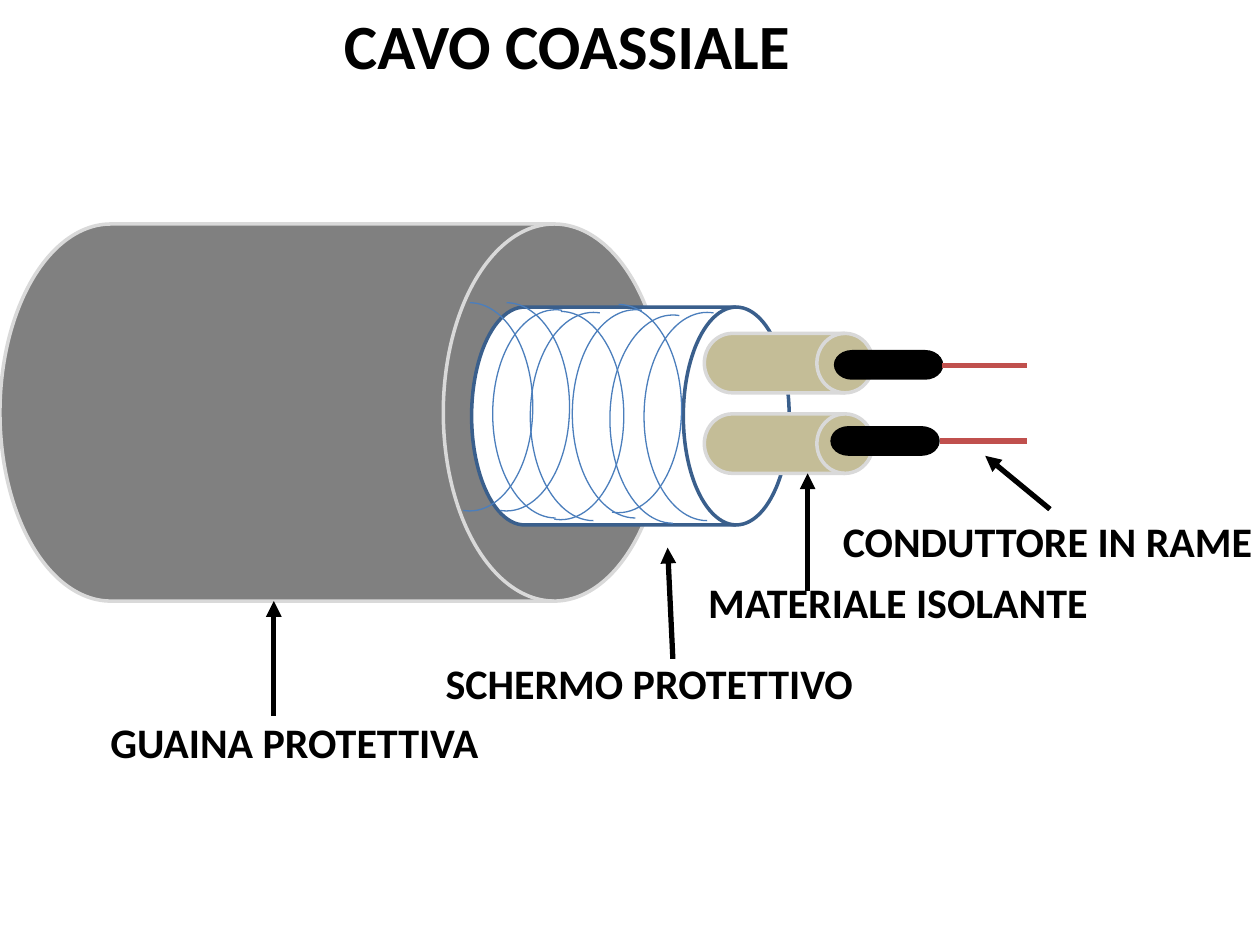
from dataclasses import dataclass
from typing import Optional

import pptx
import pptx.dml.color
import pptx.enum.shapes
import pptx.enum.text
import pptx.oxml
import pptx.util
from pptx.oxml.ns import qn

Pt = pptx.util.Pt
SHAPE = pptx.enum.shapes.MSO_SHAPE
BLACK, COPPER, RIM, SHIELD, BRAID = "000000", "C0504D", "D9D9D9", "3A5F8C", "4B7EBC"


@dataclass
class Drum:
    x: float
    y: float
    w: float
    h: float
    fill: str
    rim: Optional[str] = None


@dataclass
class Line:
    x1: float
    y1: float
    x2: float
    y2: float
    color: str = BLACK
    arrow: bool = True


@dataclass
class Label:
    text: str
    x: float
    y: float
    w: float
    h: float = 36
    size: float = 24
    wrap: bool = False


@dataclass
class Arc:
    x: float
    y: float
    rotation: float = 0


DRUMS = [
    Drum(0, 128, 380, 215.5, "808080", RIM),
    Drum(269.5, 175.5, 181.5, 124.5, "FFFFFF", SHIELD),
    Drum(402.5, 190.5, 96.5, 34, "C4BD97", RIM),
    Drum(402.5, 236.5, 96.5, 34, "C4BD97", RIM),
    Drum(476.5, 200, 62.5, 17, BLACK),
    Drum(474.5, 243.5, 62.5, 17, BLACK),
]
WIRES = [
    Line(538.5, 209, 587, 209, COPPER, arrow=False),
    Line(537, 252, 587, 252, COPPER, arrow=False),
]
ARCS = [
    Arc(368, 178.5, 180),
    Arc(253.5, 173),
    Arc(348.5, 180, 180),
    Arc(327, 177, 180),
    Arc(303, 178.5, 180),
    Arc(281.5, 177, 180),
    Arc(284.5, 178),
    Arc(317.5, 174),
    Arc(232.5, 173),
]
LABELS = [
    Label("CAVO COASSIALE", 189.5, 0, 272, 51, size=36),
    Label("GUAINA PROTETTIVA", 56, 406, 225.5, wrap=True),
    Label("SCHERMO PROTETTIVO", 247.5, 372, 250),
    Label("MATERIALE ISOLANTE", 397.5, 326, 233.5),
    Label("CONDUTTORE IN RAME", 474.5, 291, 250.5),
]
POINTERS = [
    Line(156.5, 409, 156.5, 343.5),
    Line(384.5, 376.5, 381.5, 313),
    Line(461.5, 337.5, 461.5, 270.5),
    Line(600, 291, 563, 260.5),
]


def rgb(value: str) -> pptx.dml.color.RGBColor:
    return pptx.dml.color.RGBColor.from_string(value)


def draw_drum(s, d: Drum) -> None:
    sp = s.shapes.add_shape(SHAPE.FLOWCHART_DIRECT_ACCESS_STORAGE,
                            Pt(d.x), Pt(d.y), Pt(d.w), Pt(d.h))
    sp.shadow.inherit = False
    sp.fill.solid()
    sp.fill.fore_color.rgb = rgb(d.fill)
    if d.rim:
        sp.line.color.rgb = rgb(d.rim)
        sp.line.width = Pt(2)
    else:
        sp.line.fill.background()


def draw_line(s, line: Line) -> None:
    cx = s.shapes.add_connector(pptx.enum.shapes.MSO_CONNECTOR.STRAIGHT,
                                Pt(line.x1), Pt(line.y1), Pt(line.x2), Pt(line.y2))
    cx.line.color.rgb = rgb(line.color)
    cx.line.width = Pt(3)
    if line.arrow:
        tail = pptx.oxml.xmlchemy.OxmlElement("a:tailEnd")
        tail.set("type", "triangle")
        cx.line._get_or_add_ln().append(tail)
    sp_pr = cx._element.find(qn("p:spPr"))
    sp_pr.append(pptx.oxml.xmlchemy.OxmlElement("a:effectLst"))


def draw_arc(s, arc: Arc) -> None:
    """Draw one half turn of the braided shield."""
    sp = s.shapes.add_shape(SHAPE.ARC, Pt(arc.x), Pt(arc.y), Pt(72), Pt(119))
    sp.adjustments[0] = 162
    sp.adjustments[1] = 56.155
    sp.rotation = arc.rotation
    sp.shadow.inherit = False
    sp.fill.background()
    sp.line.color.rgb = rgb(BRAID)
    sp.line.width = Pt(0.75)


def draw_label(s, label: Label) -> None:
    tb = s.shapes.add_textbox(Pt(label.x), Pt(label.y), Pt(label.w), Pt(label.h))
    tf = tb.text_frame
    tf.word_wrap = label.wrap
    tf.auto_size = pptx.enum.text.MSO_AUTO_SIZE.SHAPE_TO_FIT_TEXT
    r = tf.paragraphs[0].add_run()
    r.text = label.text
    r.font.name = "Calibri"
    r.font.size = Pt(label.size)
    r.font.bold = True
    r.font.color.rgb = rgb(BLACK)


def main() -> None:
    prs = pptx.Presentation()
    prs.slide_width, prs.slide_height = Pt(720), Pt(540)
    s = prs.slides.add_slide(prs.slide_layouts[6])
    for drum in DRUMS:
        draw_drum(s, drum)
    for wire in WIRES:
        draw_line(s, wire)
    for arc in ARCS:
        draw_arc(s, arc)
    for label in LABELS:
        draw_label(s, label)
    for pointer in POINTERS:
        draw_line(s, pointer)
    prs.save("out.pptx")


if __name__ == "__main__":
    main()
